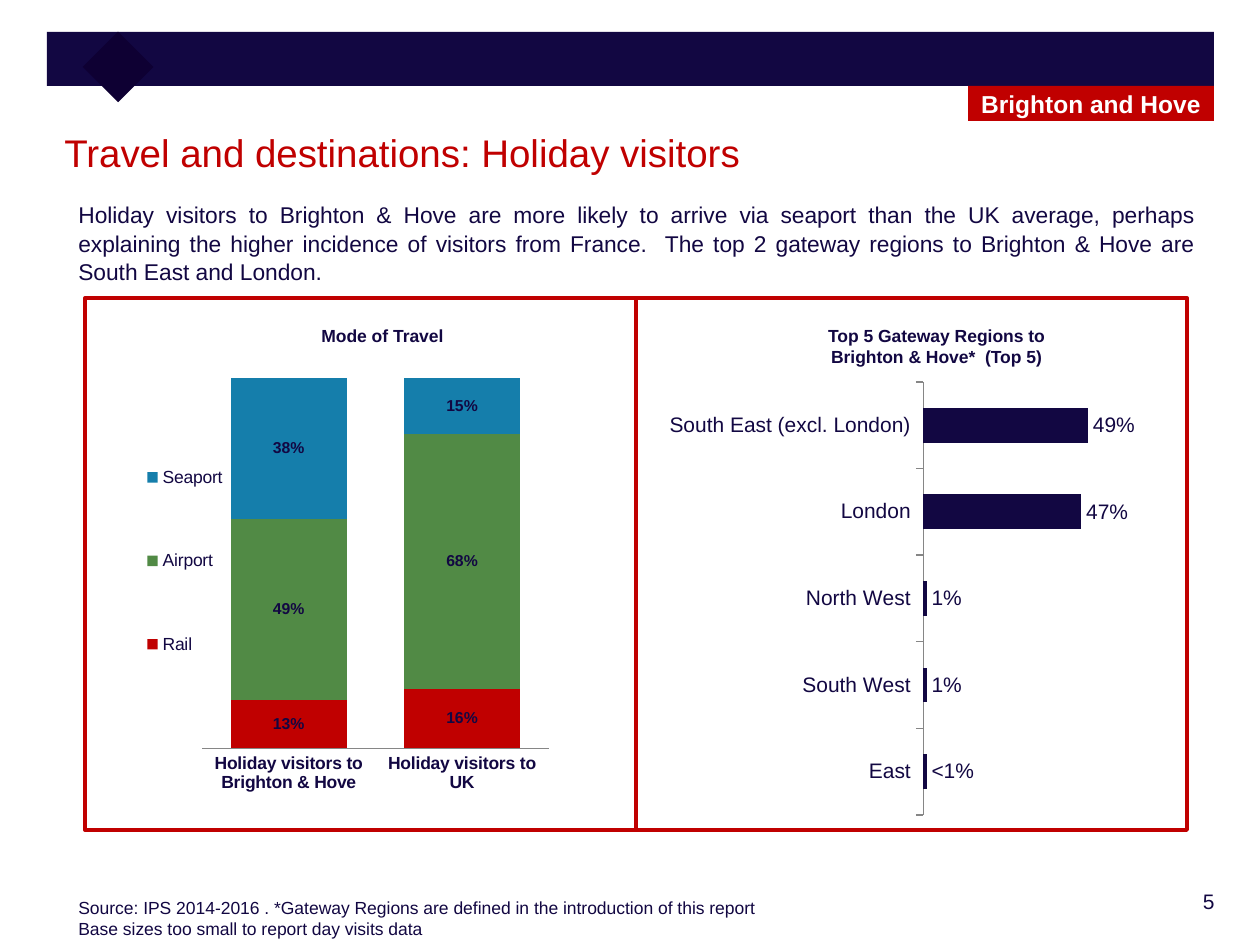
from lxml.etree import SubElement
from pptx import Presentation
from pptx.chart.data import CategoryChartData
from pptx.dml.color import RGBColor
from pptx.enum.chart import XL_CHART_TYPE as ChartType, XL_LABEL_POSITION as LabelPosition
from pptx.enum.chart import XL_LEGEND_POSITION as LegendPosition, XL_TICK_MARK as TickMark
from pptx.enum.shapes import MSO_SHAPE as Shape
from pptx.enum.text import MSO_ANCHOR as Anchor, PP_ALIGN as Align
from pptx.oxml.ns import qn
from pptx.util import Emu, Pt

NAVY, DARK, RED, WHITE = "120742", "0E0033", "C00000", "FFFFFF"
GREEN, BLUE, GREY = "518A45", "157EAB", "868686"


def px(length):
    return Emu(round(length * 914400 / 126))


def color(value):
    return RGBColor.from_string(value)


class SlideBuilder:
    """Draws styled elements on one slide, with lengths in px."""

    font_name = "Arial"

    def __init__(self, slide):
        self.slide = slide

    def style(self, font, size, ink=NAVY, bold=False):
        font.name, font.size, font.bold = self.font_name, Pt(size), bold
        font.color.rgb = color(ink)

    def fill_frame(self, frame, lines, size, ink=NAVY, bold=False, align=Align.LEFT, spacing=None):
        frame.word_wrap = True
        for index, line in enumerate(lines):
            paragraph = frame.add_paragraph() if index else frame.paragraphs[0]
            paragraph.text = line
            paragraph.alignment = align
            paragraph.line_spacing = spacing
            self.style(paragraph.font, size, ink, bold)

    def text(self, box, *lines, **look):
        shape = self.slide.shapes.add_textbox(*map(px, box))
        self.fill_frame(shape.text_frame, lines, **look)

    def rectangle(self, box, fill=None, line=None, rotation=0):
        shape = self.slide.shapes.add_shape(Shape.RECTANGLE, *map(px, box))
        shape.shadow.inherit = False
        shape.rotation = rotation
        if fill:
            shape.fill.solid()
            shape.fill.fore_color.rgb = color(fill)
        else:
            shape.fill.background()
        if line:
            shape.line.color.rgb = color(line)
            shape.line.width = Pt(2.25)
        else:
            shape.line.fill.background()
        return shape

    def tag(self, box, label, fill):
        frame = self.rectangle(box, fill).text_frame
        frame.vertical_anchor = Anchor.MIDDLE
        self.fill_frame(frame, [label], 14, WHITE, True, Align.CENTER)

    def layout(self, parent, target, x, y, width, height):
        for old in parent.findall(qn("c:layout")):
            parent.remove(old)
        layout = SubElement(parent, qn("c:layout"))
        manual = SubElement(layout, qn("c:manualLayout"))
        settings = {"xMode": "edge", "yMode": "edge", "x": x, "y": y, "w": width, "h": height}
        if target:
            settings = {"layoutTarget": target, **settings}
        for name, value in settings.items():
            SubElement(manual, qn(f"c:{name}")).set("val", str(value))
        return layout

    def chart(self, kind, box, categories, series, gap, label_size, label_bold, label_position):
        data = CategoryChartData(number_format="0%")
        data.categories = categories
        for name, values, _ in series:
            data.add_series(name, values)
        chart = self.slide.shapes.add_chart(kind, *map(px, box), data).chart
        chart.has_title = chart.has_legend = False
        self.style(chart.font, 10)
        chart.value_axis.visible = False
        chart.value_axis.has_major_gridlines = False
        chart.category_axis.format.line.color.rgb = color(GREY)
        plot = chart.plots[0]
        plot.gap_width, plot.vary_by_categories = gap, False
        for item, (_, _, fill) in zip(plot.series, series):
            item.format.fill.solid()
            item.format.fill.fore_color.rgb = color(fill)
            labels = item.data_labels
            labels.show_value = True
            labels.number_format, labels.number_format_is_linked = "0%", False
            labels.position = label_position
            self.style(labels.font, label_size, bold=label_bold)
        return chart

    def travel_chart(self, box, categories, series):
        chart = self.chart(ChartType.COLUMN_STACKED_100, box, categories, series,
                           49, 9, True, LabelPosition.CENTER)
        chart.plots[0].overlap = 100
        axis = chart.category_axis
        axis.major_tick_mark = TickMark.NONE
        self.style(axis.tick_labels.font, 10, bold=True)
        chart.has_legend = True
        legend = chart.legend
        legend.position, legend.include_in_layout = LegendPosition.LEFT, False
        self.style(legend.font, 10)
        legend_xml = legend._element
        layout = self.layout(legend_xml, None, 0.04, 0.11, 0.2, 0.62)
        legend_xml.find(qn("c:legendPos")).addnext(layout)
        area = chart._chartSpace.chart.plotArea
        area.insert(0, self.layout(area, "inner", 0.18, 0.06, 0.81, 0.73))

    def gateway_chart(self, box, categories, series, special_labels):
        position = LabelPosition.OUTSIDE_END
        chart = self.chart(ChartType.BAR_CLUSTERED, box, categories, series,
                           150, 12, False, position)
        axis = chart.category_axis
        axis.reverse_order = True
        axis.major_tick_mark = TickMark.OUTSIDE
        self.style(axis.tick_labels.font, 12)
        for index, caption in special_labels.items():
            label = chart.plots[0].series[0].points[index].data_label
            self.fill_frame(label.text_frame, [caption], 12)
            label.position = position


def main():
    presentation = Presentation()
    presentation.slide_width, presentation.slide_height = px(1260), px(945)
    builder = SlideBuilder(presentation.slides.add_slide(presentation.slide_layouts[6]))

    builder.text((1075, 882, 152, 45), "5", size=12, align=Align.RIGHT)
    builder.rectangle((47, 32, 1167, 54), NAVY)
    builder.rectangle((93, 42, 50, 50), DARK, rotation=45)
    builder.text((52, 123, 1160, 77), "Travel and destinations: Holiday visitors", size=22, ink=RED)
    builder.text((66, 193, 1140, 93),
                 "Holiday visitors to Brighton & Hove are more likely to arrive via seaport than the "
                 "UK average, perhaps explaining the higher incidence of visitors from France.  The "
                 "top 2 gateway regions to Brighton & Hove are South East and London.",
                 size=13, align=Align.JUSTIFY, spacing=1.05)

    builder.text((309, 319, 185, 39), "Mode of Travel", size=10, bold=True)
    builder.travel_chart((125, 348, 428, 507),
                         ["Holiday visitors to Brighton & Hove", "Holiday visitors to UK"],
                         [("Rail", (0.13, 0.16), RED),
                          ("Airport", (0.49, 0.68), GREEN),
                          ("Seaport", (0.38, 0.15), BLUE)])

    builder.text((803, 319, 267, 58), "Top 5 Gateway Regions to Brighton & Hove*  (Top 5)",
                 size=10, bold=True, align=Align.CENTER)
    builder.gateway_chart((660, 373, 475, 451),
                          ["South East (excl. London)", "London", "North West", "South West", "East"],
                          [("Series 1", (0.49, 0.47, 0.01, 0.01, 0.01), NAVY)],
                          {4: "<1%"})

    builder.text((66, 891, 1144, 77),
                 "Source: IPS 2014-2016 . *Gateway Regions are defined in the introduction of this report",
                 "Base sizes too small to report day visits data", size=10)
    for column in range(2):
        builder.rectangle((85 + 551 * column, 298, 551, 532), line=RED)
    builder.tag((968, 86, 246, 35), "Brighton and Hove", RED)

    presentation.save("out.pptx")


if __name__ == "__main__":
    main()
